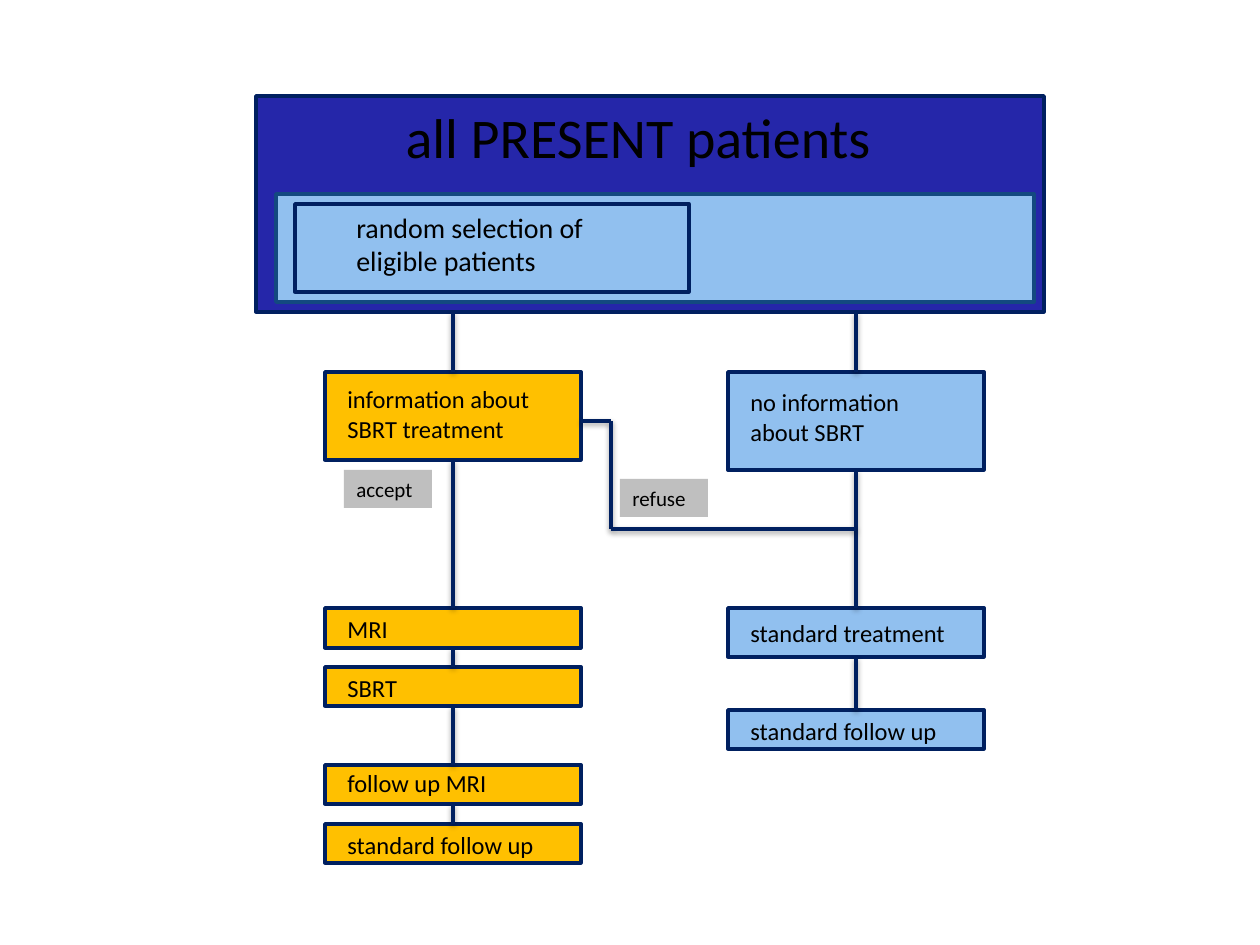
import pptx
import pptx.util
import pptx.dml.color
import pptx.enum.shapes
import pptx.enum.text
import pptx.oxml

PX = 914400 // 126
NAVY, BLUE, ORANGE, GREY = "002060", "91C0EF", "FFC000", "BFBFBF"
LEFT, RIGHT, BOX_W = 325, 728, 256
TEXT_INDENT = 10

# Nested panels at the top: left, top, width, height, fill, outline
PANELS = [
    (256, 96, 788, 216, "2526A9", NAVY),
    (276, 194, 758, 108, BLUE, "134980"),
    (295, 204, 394, 88, BLUE, NAVY),
]
TITLE = ("all PRESENT patients", (393, 96, 640, 81), 32)
SELECTION = ("random selection of eligible patients", (344, 204, 276, 81), 16)

# Steps of each arm: text, box top, box height, text top, text width, text height
ARMS = [
    (LEFT, ORANGE, [
        ("information about SBRT treatment", 372, 88, 378, 227, 72),
        ("MRI", 608, 40, 608, 246, 43),
        ("SBRT", 667, 39, 667, 246, 43),
        ("follow up MRI", 765, 39, 762, 246, 43),
        ("standard follow up", 824, 39, 824, 246, 43),
    ]),
    (RIGHT, BLUE, [
        ("no information about SBRT", 372, 98, 381, 227, 72),
        ("standard treatment", 608, 49, 612, 256, 26),
        ("standard follow up", 710, 39, 710, 246, 43),
    ]),
]
DECISIONS = [("accept", 344, 470), ("refuse", 620, 479)]
REFUSE_PATH = [(LEFT + BOX_W, 421), (611, 421), (611, 529), (RIGHT + BOX_W // 2, 529)]

SHADOW = (
    '<a:effectLst xmlns:a="http://schemas.openxmlformats.org/drawingml/2006/main">'
    '<a:outerShdw blurRad="40000" dist="20000" dir="5400000" rotWithShape="0">'
    '<a:srgbClr val="000000"><a:alpha val="38000"/></a:srgbClr>'
    '</a:outerShdw></a:effectLst>'
)


def color(value):
    return pptx.dml.color.RGBColor.from_string(value)


def emu(values):
    return [value * PX for value in values]


def set_outline(line, value):
    line.color.rgb = color(value)
    line.width = pptx.util.Pt(2)


def add_box(place, fill, outline=None):
    box = slide.shapes.add_shape(pptx.enum.shapes.MSO_SHAPE.RECTANGLE, *emu(place))
    box.shadow.inherit = False
    box.fill.solid()
    box.fill.fore_color.rgb = color(fill)
    if outline:
        set_outline(box.line, outline)
    else:
        box.line.fill.background()
    return box


def write(holder, text, size):
    frame = holder.text_frame
    frame.text = text
    frame_format = {
        "word_wrap": True,
        "auto_size": pptx.enum.text.MSO_AUTO_SIZE.NONE,
        "vertical_anchor": pptx.enum.text.MSO_ANCHOR.TOP,
    }
    for key, value in frame_format.items():
        setattr(frame, key, value)
    paragraph = frame.paragraphs[0]
    paragraph.alignment = pptx.enum.text.PP_ALIGN.LEFT
    paragraph.line_spacing = 1.0
    font = paragraph.runs[0].font
    for key, value in {"name": "Calibri", "size": pptx.util.Pt(size)}.items():
        setattr(font, key, value)
    font.color.rgb = color("000000")


def add_label(text, place, size):
    write(slide.shapes.add_textbox(*emu(place)), text, size)


def add_line(start, end):
    line = slide.shapes.add_connector(
        pptx.enum.shapes.MSO_CONNECTOR.STRAIGHT, *emu(start + end))
    set_outline(line.line, NAVY)
    line._element.spPr.append(pptx.oxml.parse_xml(SHADOW))
    return line


deck = pptx.Presentation()
deck.slide_width, deck.slide_height = emu((1260, 945))
slide = deck.slides.add_slide(deck.slide_layouts[5])

# Panels, with the title lifted above them
for *place, fill, outline in PANELS:
    add_box(place, fill, outline)
text, place, size = TITLE
title = slide.shapes.title
title.left, title.top, title.width, title.height = emu(place)
write(title, text, size)
slide.shapes._spTree.append(title._element)
add_label(*SELECTION)

# Two arms: each step is joined to the one above it
panel_bottom = PANELS[0][1] + PANELS[0][3]
for left, fill, steps in ARMS:
    center = left + BOX_W // 2
    above, bottom = None, panel_bottom
    for text, top, height, text_top, text_w, text_h in steps:
        step = add_box((left, top, BOX_W, height), fill, NAVY)
        link = add_line((center, bottom), (center, top))
        if above:
            link.begin_connect(above, 2)
        link.end_connect(step, 0)
        add_label(text, (left + TEXT_INDENT, text_top, text_w, text_h), 14)
        above, bottom = step, top + height

# Patients who refuse cross over to the other arm
for start, end in zip(REFUSE_PATH, REFUSE_PATH[1:]):
    add_line(start, end)
for text, left, top in DECISIONS:
    write(add_box((left, top, 88, 38), GREY), text, 12)

deck.save("out.pptx")
